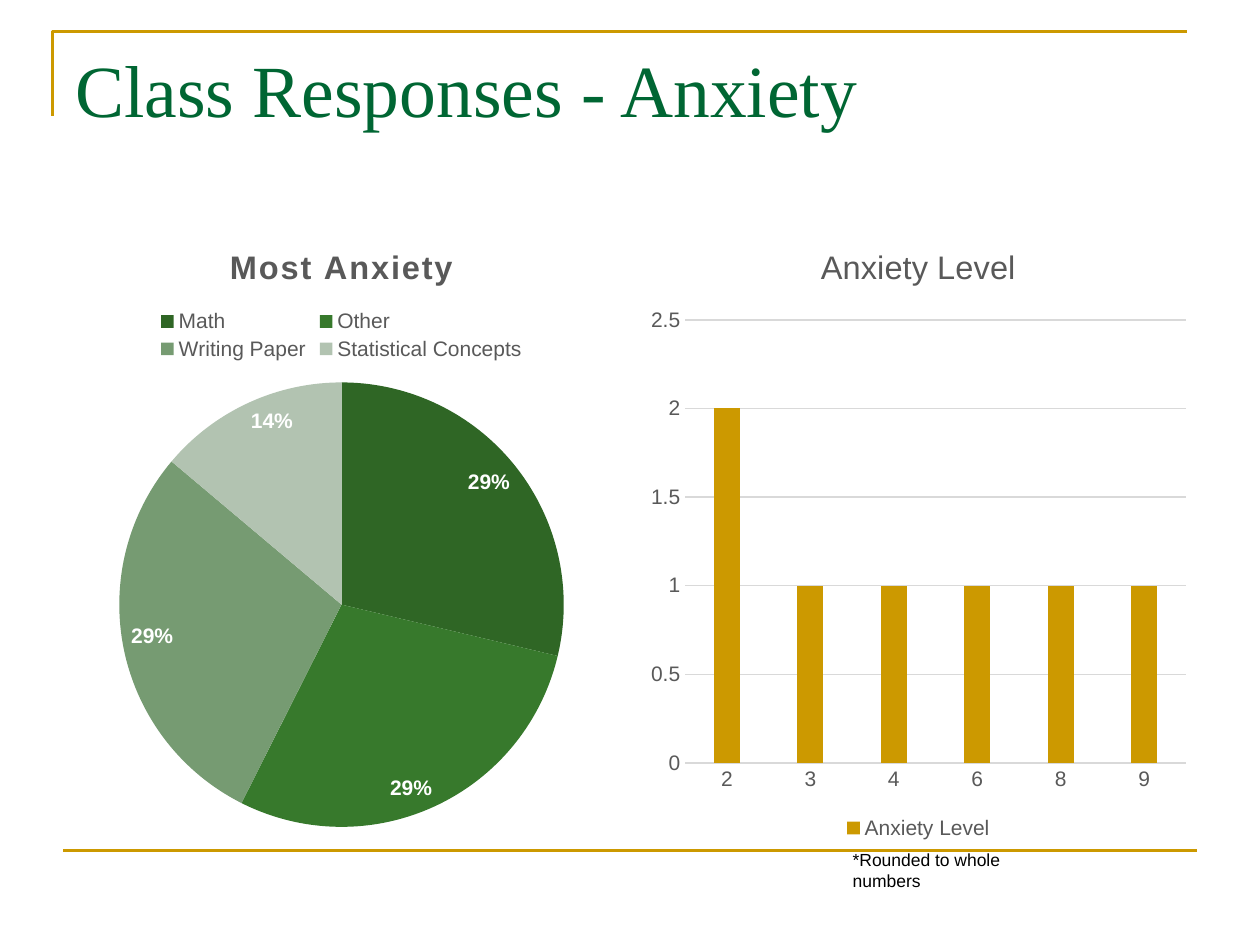
from lxml.etree import SubElement
from pptx import Presentation
from pptx.chart.data import CategoryChartData as Data
from pptx.dml.color import RGBColor as Rgb
from pptx.enum.chart import XL_CHART_TYPE as Kind
from pptx.enum.chart import XL_LABEL_POSITION as Spot
from pptx.enum.chart import XL_LEGEND_POSITION as Side
from pptx.enum.chart import XL_TICK_MARK as Tick
from pptx.enum.shapes import MSO_CONNECTOR as Link
from pptx.oxml.ns import qn
from pptx.util import Cm, Pt

HUES = {
    "gold": "CC9900", "title": "006633", "black": "000000",
    "gray": "595959", "grid": "D9D9D9", "white": "FFFFFF",
    "math": "2F6625", "other": "37792C", "paper": "769B72", "stats": "B2C3B1",
}
SANS, SERIF = "Arial", "Times New Roman"


def hue(name):
    return Rgb.from_string(HUES[name])


def style(font, size, color, face=SANS, bold=False):
    font.name, font.size, font.bold = face, Pt(size), bold
    font.color.rgb = hue(color)


def stroke(line, color="gold", width=1.5):
    line.color.rgb = hue(color)
    line.width = Pt(width)


def add_frame(slide):
    """Draw the corner bracket above the title and the rule at the foot."""
    left, top = Cm(1.06), Cm(0.64)
    pen = slide.shapes.build_freeform(left, Cm(2.33))
    pen.add_line_segments([(left, top), (Cm(23.92), top)], close=False)
    corner = pen.convert_to_shape()
    corner.fill.background()
    corner.shadow.inherit = False
    stroke(corner.line)

    foot = Cm(17.15)
    rule = slide.shapes.add_connector(
        Link.STRAIGHT, Cm(1.27), foot, Cm(24.13), foot)
    stroke(rule.line)
    SubElement(rule.element.spPr, qn("a:effectLst"))


def add_text(slide, text, box, size, color, face=SANS):
    frame = slide.shapes.add_textbox(*map(Cm, box)).text_frame
    frame.word_wrap = True
    run = frame.paragraphs[0].add_run()
    run.text = text
    style(run.font, size, color, face)


def add_chart(slide, kind, left, title, cats, vals, side, bold=False):
    """Add a one-series chart with its title and legend styled."""
    data = Data()
    data.categories = cats
    data.add_series(title, vals)
    chart = slide.shapes.add_chart(
        kind, Cm(left), Cm(4.45), Cm(11.23), Cm(12.57), data).chart
    style(chart.font, 10, "black")
    chart.has_title = True
    run = chart.chart_title.text_frame.paragraphs[0].add_run()
    run.text = title
    style(run.font, 18.6, "gray", bold=bold)
    if bold:
        run.font._element.set("spc", "100")
    chart.chart_title.include_in_layout = False
    chart.has_legend = True
    chart.legend.position = side
    chart.legend.include_in_layout = False
    style(chart.legend.font, 12, "gray")
    return chart


def add_pie(slide):
    chart = add_chart(
        slide, Kind.PIE, 1.27, "Most Anxiety",
        ["Math", "Other", "Writing Paper", "Statistical Concepts"],
        [29, 29, 29, 14], Side.TOP, bold=True)
    plot = chart.plots[0]
    plot.vary_by_categories = True
    for i, name in enumerate(["math", "other", "paper", "stats"]):
        fill = plot.series[0].points[i].format.fill
        fill.solid()
        fill.fore_color.rgb = hue(name)
    plot.has_data_labels = True
    tags = plot.data_labels
    tags.show_value = False
    tags.show_percentage = True
    tags.number_format, tags.number_format_is_linked = "0%", False
    tags.position = Spot.INSIDE_END
    style(tags.font, 12, "white", bold=True)


def add_bars(slide):
    chart = add_chart(
        slide, Kind.COLUMN_CLUSTERED, 12.9, "Anxiety Level",
        ["2", "3", "4", "6", "8", "9"], [2, 1, 1, 1, 1, 1], Side.BOTTOM)
    plot = chart.plots[0]
    plot.vary_by_categories = False
    plot.gap_width, plot.overlap = 219, -27
    fill = plot.series[0].format.fill
    fill.solid()
    fill.fore_color.rgb = hue("gold")
    for axis in (chart.category_axis, chart.value_axis):
        axis.major_tick_mark = axis.minor_tick_mark = Tick.NONE
        style(axis.tick_labels.font, 12, "gray")
    stroke(chart.category_axis.format.line, "grid", 0.75)
    chart.value_axis.format.line.fill.background()
    stroke(chart.value_axis.major_gridlines.format.line, "grid", 0.75)


def main():
    deck = Presentation()
    deck.slide_width, deck.slide_height = Cm(25.4), Cm(19.05)
    slide = deck.slides.add_slide(deck.slide_layouts[6])
    add_frame(slide)
    add_text(slide, "Class Responses - Anxiety",
             (1.27, 0.76, 22.86, 3.18), 42, "title", SERIF)
    add_text(slide, "*Rounded to whole numbers",
             (16.94, 16.99, 4.22, 1.12), 10, "black")
    add_pie(slide)
    add_bars(slide)
    deck.save("out.pptx")


if __name__ == "__main__":
    main()
